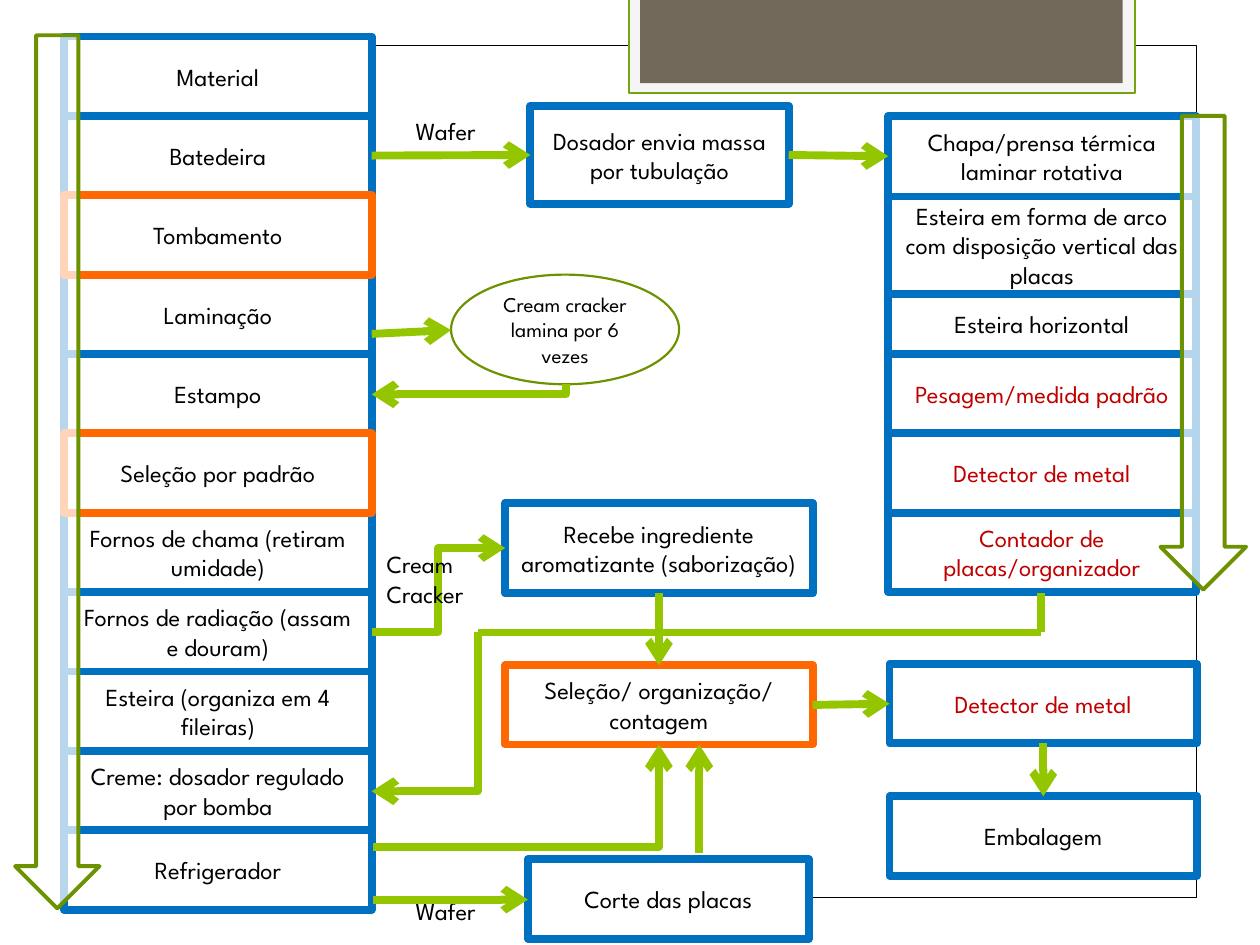
from itertools import accumulate
from lxml import etree
from pptx import Presentation
from pptx import util as u
from pptx.dml.color import RGBColor
from pptx.enum import shapes, text
from pptx.oxml.ns import qn

FONT = "League Spartan"
BLACK = RGBColor(0x00, 0x00, 0x00)
WHITE = RGBColor(0xFF, 0xFF, 0xFF)
BLUE = RGBColor(0x00, 0x70, 0xC0)
ORANGE = RGBColor(0xFF, 0x67, 0x00)
RED = RGBColor(0xC0, 0x00, 0x00)
LIME = RGBColor(0x94, 0xC6, 0x00)
OLIVE = RGBColor(0x6D, 0x92, 0x00)
LEAF = RGBColor(0x74, 0xA5, 0x10)
PALE = RGBColor(0xF5, 0xF5, 0xF5)
BROWN = RGBColor(0x71, 0x68, 0x5A)

WIDE, ROW, THICK = 2.44, 0.63, 4.5
TOP, RISE = shapes.MSO_SHAPE, shapes.MSO_CONNECTOR

# Left column: key, text, border
STEPS = [
    ("material", "Material", BLUE),
    ("mixer", "Batedeira", BLUE),
    ("tip", "Tombamento", ORANGE),
    ("roll", "Laminação", BLUE),
    ("stamp", "Estampo", BLUE),
    ("sort", "Seleção por padrão", ORANGE),
    ("flame", "Fornos de chama (retiram umidade)", BLUE),
    ("oven", "Fornos de radiação (assam e douram)", BLUE),
    ("belt", "Esteira (organiza em 4 fileiras)", BLUE),
    ("cream", "Creme: dosador regulado por bomba", BLUE),
    ("fridge", "Refrigerador", BLUE),
]
# Right column: key, text, text colour, row height
PLATES = [
    ("press", "Chapa/prensa térmica laminar rotativa", BLACK, 0.64),
    ("arc", "Esteira em forma de arco com disposição vertical das placas", BLACK, 0.77),
    ("flat", "Esteira horizontal", BLACK, 0.48),
    ("weigh", "Pesagem/medida padrão", RED, ROW),
    ("metal", "Detector de metal", RED, ROW),
    ("count", "Contador de placas/organizador", RED, ROW),
]
# Free boxes: key, text, place, border, text colour
BOXES = [
    ("doser", "Dosador envia massa por tubulação", (4.21, 0.84, 2.05, 0.78), BLUE, BLACK),
    ("flavour", "Recebe ingrediente aromatizante (saborização)", (4.01, 3.99, WIDE, 0.72), BLUE, BLACK),
    ("pick", "Seleção/ organização/ contagem", (4.01, 5.28, WIDE, ROW), ORANGE, BLACK),
    ("cut", "Corte das placas", (4.19, 6.82, 2.23, ROW), BLUE, BLACK),
    ("check", "Detector de metal", (7.06, 5.27, WIDE, ROW), BLUE, RED),
    ("pack", "Embalagem", (7.06, 6.32, WIDE, ROW), BLUE, BLACK),
]
# Joined arrows: from, side, to, side, kind (0 top, 1 left, 2 bottom, 3 right)
JOINS = [
    ("mixer", 3, "doser", 1, RISE.STRAIGHT),
    ("doser", 3, "press", 1, RISE.STRAIGHT),
    ("oven", 3, "flavour", 1, RISE.ELBOW),
    ("flavour", 2, "pick", 0, RISE.STRAIGHT),
    ("pick", 3, "check", 1, RISE.STRAIGHT),
    ("check", 2, "pack", 0, RISE.STRAIGHT),
]
# Loose lines: start, end, arrowhead
LINES = [
    ((2.95, 2.65), (3.58, 2.62), True),
    ((2.96, 7.14), (4.19, 7.14), True),
    ((5.55, 6.77), (5.55, 5.91), True),
    ((8.26, 5.02), (3.79, 5.02), False),
    ((8.26, 5.02), (8.26, 4.71), False),
]
# One-corner arrows that go down, then left
DROPS = [((4.49, 3.05), (2.95, 3.13)), ((3.79, 5.02), (2.95, 6.28))]

prs = Presentation()
prs.slide_width, prs.slide_height = u.Inches(10), u.Inches(7.5)
slide = prs.slides.add_slide(prs.slide_layouts[6])
parts = {}


def write(frame, words, size=14, color=BLACK, align=text.PP_ALIGN.CENTER):
    frame.text = words
    for par in frame.paragraphs:
        par.alignment = align
        for run in par.runs:
            run.font.size, run.font.name = u.Pt(size), FONT
            run.font.color.rgb = color


def shape(place, fill=WHITE, line=None, width=THICK, kind=TOP.RECTANGLE):
    shp = slide.shapes.add_shape(kind, *map(u.Inches, place))
    shp.shadow.inherit = False
    shp.fill.solid()
    shp.fill.fore_color.rgb = fill
    if line is None:
        shp.line.fill.background()
    else:
        shp.line.color.rgb, shp.line.width = line, u.Pt(width)
    return shp


def box(key, words, place, line, color=BLACK):
    parts[key] = shape(place, line=line)
    frame = parts[key].text_frame
    frame.word_wrap = True
    frame.vertical_anchor = text.MSO_ANCHOR.MIDDLE
    write(frame, words, color=color)


def label(words, place):
    frame = slide.shapes.add_textbox(*map(u.Inches, place)).text_frame
    frame.word_wrap = False
    write(frame, words, align=text.PP_ALIGN.LEFT)


def link(start, end, head=True, kind=RISE.STRAIGHT):
    con = slide.shapes.add_connector(kind, *map(u.Inches, start + end))
    con.line.color.rgb, con.line.width = LIME, u.Pt(THICK)
    if head:
        etree.SubElement(con.line._get_or_add_ln(), qn("a:tailEnd"), type="arrow")
    etree.SubElement(con._element.spPr, qn("a:effectLst"))
    return con


def corner(start, end, turn=False):
    if turn:  # swap the sides around the centre, then rotate a quarter
        mid = [(a + b) / 2 for a, b in zip(start, end)]
        half = [abs(end[1] - start[1]) / 2, abs(end[0] - start[0]) / 2]
        start = tuple(m - h for m, h in zip(mid, half))
        end = tuple(m + h for m, h in zip(mid, half))
    props = link(start, end, kind=RISE.ELBOW)._element.spPr
    props.find(qn("a:prstGeom")).set("prst", "bentConnector2")
    if turn:
        props.find(qn("a:xfrm")).set("rot", "5400000")


def flow(place, alpha):
    shp = shape(place, line=OLIVE, width=2.25, kind=TOP.DOWN_ARROW)
    tint = shp._element.spPr.find(qn("a:solidFill"))[0]
    etree.SubElement(tint, qn("a:alpha"), val=str(alpha * 1000))


# Frame and top tab
shape((0.5, 0.36, 9, 6.76), line=BLACK, width=0.5)
shape((4.99, -0.02, 4.02, 0.76), PALE, LEAF, 1.25)
shape((5.08, -0.02, 3.83, 0.68), BROWN)

# Boxes, with orange borders above blue ones
grid = [(key, words, (0.51, 0.29 + i * ROW, WIDE, ROW), line, BLACK)
        for i, (key, words, line) in enumerate(STEPS)]
tops = accumulate((row[3] for row in PLATES), initial=0.92)
grid += [(key, words, (7.05, top, WIDE, high), BLUE, color)
         for (key, words, color, high), top in zip(PLATES, tops)]
for item in sorted(grid + BOXES, key=lambda b: b[3] == ORANGE):
    box(*item)

# Rolling loop
loop = shape((3.58, 2.18, 1.81, 0.87), line=OLIVE, width=1.25, kind=TOP.OVAL)
loop.text_frame.word_wrap = True
loop.text_frame.vertical_anchor = text.MSO_ANCHOR.MIDDLE
write(loop.text_frame, "Cream cracker lamina por 6 vezes", 12)

# Labels and connectors
for top in (0.87, 7.06):
    label("Wafer", (3.2, top, 0.78, 0.34))
for a, out, b, into, kind in JOINS:
    con = link((0, 0), (1, 1), kind=kind)
    con.begin_connect(parts[a], out)
    con.end_connect(parts[b], into)
for line in LINES:
    link(*line)
for start, end in DROPS:
    corner(start, end, turn=True)
corner((2.96, 6.72), (5.23, 5.91))
label("Cream\nCracker", (2.97, 4.31, 0.97, 0.57))

# Translucent flow arrows
flow((9.21, 0.92, 0.68, 3.76), 71)
flow((0.12, 0.28, 0.67, 6.93), 72)

prs.save("out.pptx")
